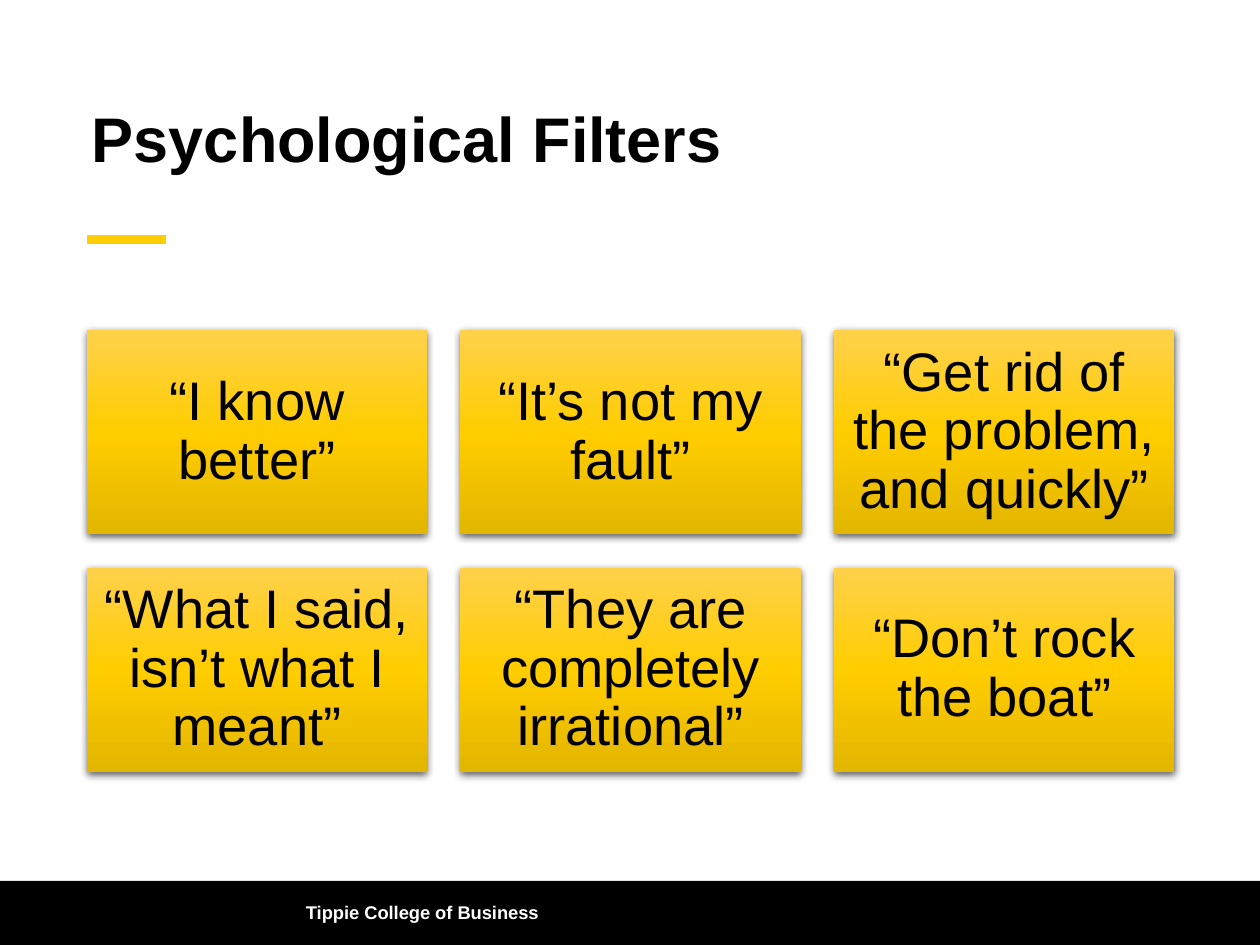
from lxml import etree
from pptx import Presentation
from pptx import util as u
from pptx.dml.color import RGBColor
from pptx.enum import shapes, text
from pptx.oxml import ns

BLACK, WHITE, GOLD = "000000", "FFFFFF", "FFCD00"
CARD_STOPS = [(0, "FFD14B"), (50, GOLD), (100, "E3B600")]


def color(value):
    return RGBColor.from_string(value)


def add_color(parent, value):
    return etree.SubElement(parent, ns.qn("a:srgbClr"), val=value)


def write(frame, words, size, ink=BLACK, bold=False, align=text.PP_ALIGN.LEFT,
          spacing=1.0, margins=None):
    frame.word_wrap = True
    frame.auto_size = text.MSO_AUTO_SIZE.NONE
    frame.vertical_anchor = text.MSO_ANCHOR.MIDDLE
    if margins is not None:
        frame.margin_left = frame.margin_right = u.Inches(margins)
        frame.margin_top = frame.margin_bottom = u.Inches(margins)
    paragraph = frame.paragraphs[0]
    paragraph.alignment = align
    paragraph.line_spacing = spacing
    paragraph.space_before = u.Pt(0)
    run = paragraph.add_run()
    run.text = words
    run.font.name = "Arial"
    run.font.size = u.Pt(size)
    run.font.bold = bold
    run.font.color.rgb = color(ink)


class Deck:
    def __init__(self, width, height):
        self.prs = Presentation()
        self.prs.slide_width = u.Inches(width)
        self.prs.slide_height = u.Inches(height)
        self.slide = self.prs.slides.add_slide(self.prs.slide_layouts[5])

    def title(self, words, *box):
        heading = self.slide.shapes.title
        heading.left, heading.top, heading.width, heading.height = map(u.Inches, box)
        write(heading.text_frame, words, 36, bold=True, spacing=0.9)

    def rect(self, *box):
        panel = self.slide.shapes.add_shape(
            shapes.MSO_SHAPE.RECTANGLE, *map(u.Inches, box))
        panel.line.fill.background()
        panel.shadow.inherit = False
        return panel

    def band(self, fill, *box):
        panel = self.rect(*box)
        panel.fill.solid()
        panel.fill.fore_color.rgb = color(fill)

    def rule(self, ink, weight, *ends):
        accent = self.slide.shapes.add_connector(
            shapes.MSO_CONNECTOR.STRAIGHT, *map(u.Inches, ends))
        accent.line.color.rgb = color(ink)
        accent.line.width = u.Pt(weight)
        etree.SubElement(accent._element.spPr, ns.qn("a:effectLst"))

    def label(self, words, *box):
        footer = self.slide.shapes.add_textbox(*map(u.Inches, box))
        write(footer.text_frame, words, 10.5, ink=WHITE, bold=True)

    def card(self, words, *box):
        card = self.rect(*box)
        # Three-stop gradient running from top to bottom
        card.fill.gradient()
        card.fill.gradient_angle = 270
        properties = card._element.spPr
        stops = properties.find(".//" + ns.qn("a:gsLst"))
        for stop in list(stops):
            stops.remove(stop)
        for percent, tint in CARD_STOPS:
            stop = etree.SubElement(stops, ns.qn("a:gs"), pos=str(percent * 1000))
            add_color(stop, tint)
        # Soft shadow below the card
        shadow = etree.SubElement(
            properties.find(ns.qn("a:effectLst")), ns.qn("a:outerShdw"),
            blurRad=str(u.Pt(4.5)), dist=str(u.Pt(1.5)), dir="5400000", rotWithShape="0")
        etree.SubElement(add_color(shadow, BLACK), ns.qn("a:alpha"), val="63000")
        write(card.text_frame, words, 31, align=text.PP_ALIGN.CENTER,
              spacing=0.9, margins=0.13)


def main():
    deck = Deck(10, 7.5)

    # Footer band, accent rule and title
    deck.band(BLACK, 0, 6.99, 10, 0.51)
    deck.rule(GOLD, 5, 0.69, 1.9, 1.32, 1.9)
    deck.title("Psychological Filters", 0.63, 0.4, 8.62, 1.46)
    deck.label("Tippie College of Business", 2.33, 7.04, 6.86, 0.4)

    # Grid of filters, three to a row
    filters = [
        "“I know better”", "“It’s not my fault”",
        "“Get rid of the problem, and quickly”",
        "“What I said, isn’t what I meant”",
        "“They are completely irrational”", "“Don’t rock the boat”",
    ]
    columns, left, right, top = 3, 0.69, 9.32, 2.62
    width, height = 2.7, 1.62
    gap = (right - left - columns * width) / (columns - 1)
    for index, words in enumerate(filters):
        row, column = divmod(index, columns)
        deck.card(words, left + column * (width + gap),
                  top + row * (height + gap), width, height)

    deck.prs.save("out.pptx")


if __name__ == "__main__":
    main()
